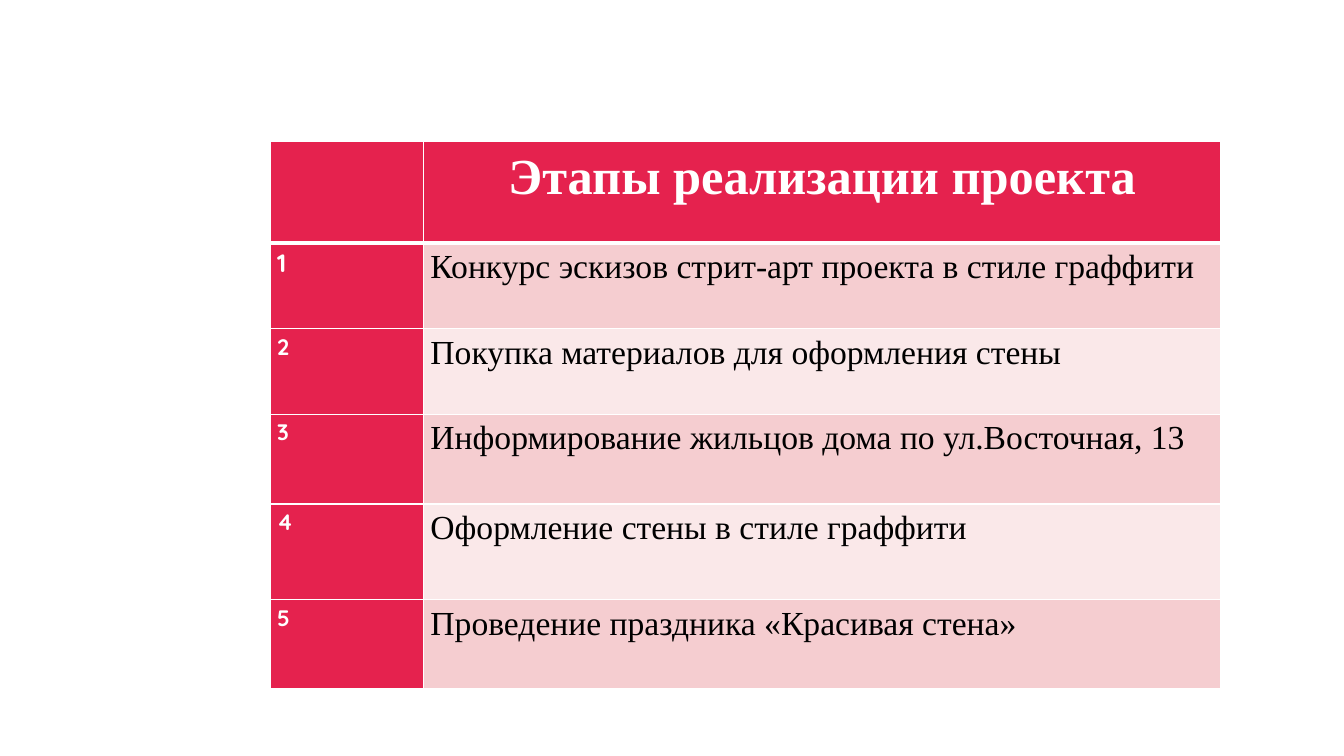
from pptx import Presentation
from pptx.dml.color import RGBColor
from pptx.enum.text import PP_ALIGN
from pptx.oxml import parse_xml
from pptx.oxml.ns import nsdecls
from pptx.util import Inches, Pt

# Content
HEADING = "Этапы реализации проекта"
STAGES = [
    "Конкурс эскизов стрит-арт проекта в стиле граффити",
    "Покупка материалов для оформления стены",
    "Информирование жильцов дома по ул.Восточная, 13",
    "Оформление стены в стиле граффити",
    "Проведение праздника «Красивая стена»",
]

# Grid and style, lengths in inches
LEFT, TOP = 2.68, 1.4
COLUMNS = [1.52, 7.91]
ROWS = [1.01, 0.85, 0.85, 0.89, 0.95, 0.88]
CRIMSON, WHITE, BLACK = "E5224E", "FFFFFF", "000000"
BANDS = ["F5CDD0", "FAE8E9"]
NUMBER_FONT, TEXT_FONT = "Quicksand", "Times New Roman"


def color(value):
    return RGBColor.from_string(value)


def style_cell(cell, fill, bottom=1):
    """White borders on all sides, then the cell's fill."""
    properties = cell._tc.get_or_add_tcPr()
    for side, width in (("L", 1), ("R", 1), ("T", 1), ("B", bottom)):
        properties.append(parse_xml(
            f'<a:ln{side} {nsdecls("a")} w="{Pt(width)}"><a:solidFill>'
            f'<a:srgbClr val="{WHITE}"/></a:solidFill></a:ln{side}>'))
    cell.fill.solid()
    cell.fill.fore_color.rgb = color(fill)
    cell.margin_left = cell.margin_right = Inches(0.07)
    cell.margin_top = cell.margin_bottom = 0


def write(cell, text, font, size, ink, bold, align=PP_ALIGN.LEFT):
    paragraph = cell.text_frame.paragraphs[0]
    paragraph.alignment = align
    paragraph.line_spacing = 1.15
    run = paragraph.add_run()
    run.text = text
    run.font.name = font
    run.font.size = Pt(size)
    run.font.bold = bold
    run.font.color.rgb = color(ink)


presentation = Presentation()
presentation.slide_width, presentation.slide_height = Inches(13.33), Inches(7.5)
slide = presentation.slides.add_slide(presentation.slide_layouts[6])

# Table grid
table = slide.shapes.add_table(
    len(ROWS), len(COLUMNS), Inches(LEFT), Inches(TOP),
    Inches(sum(COLUMNS)), Inches(sum(ROWS))).table
for column, width in zip(table.columns, COLUMNS):
    column.width = Inches(width)
for row, height in zip(table.rows, ROWS):
    row.height = Inches(height)

# Header row
for header in table.rows[0].cells:
    style_cell(header, CRIMSON, bottom=3)
write(table.cell(0, 1), HEADING, TEXT_FONT, 36, WHITE, True, PP_ALIGN.CENTER)

# Numbered stages
for number, stage in enumerate(STAGES, 1):
    number_cell, stage_cell = table.cell(number, 0), table.cell(number, 1)
    style_cell(number_cell, CRIMSON)
    style_cell(stage_cell, BANDS[(number - 1) % 2])
    write(number_cell, str(number), NUMBER_FONT, 18 if number == 1 else 16, WHITE, True)
    write(stage_cell, stage, TEXT_FONT, 24, BLACK, False)

presentation.save("out.pptx")
